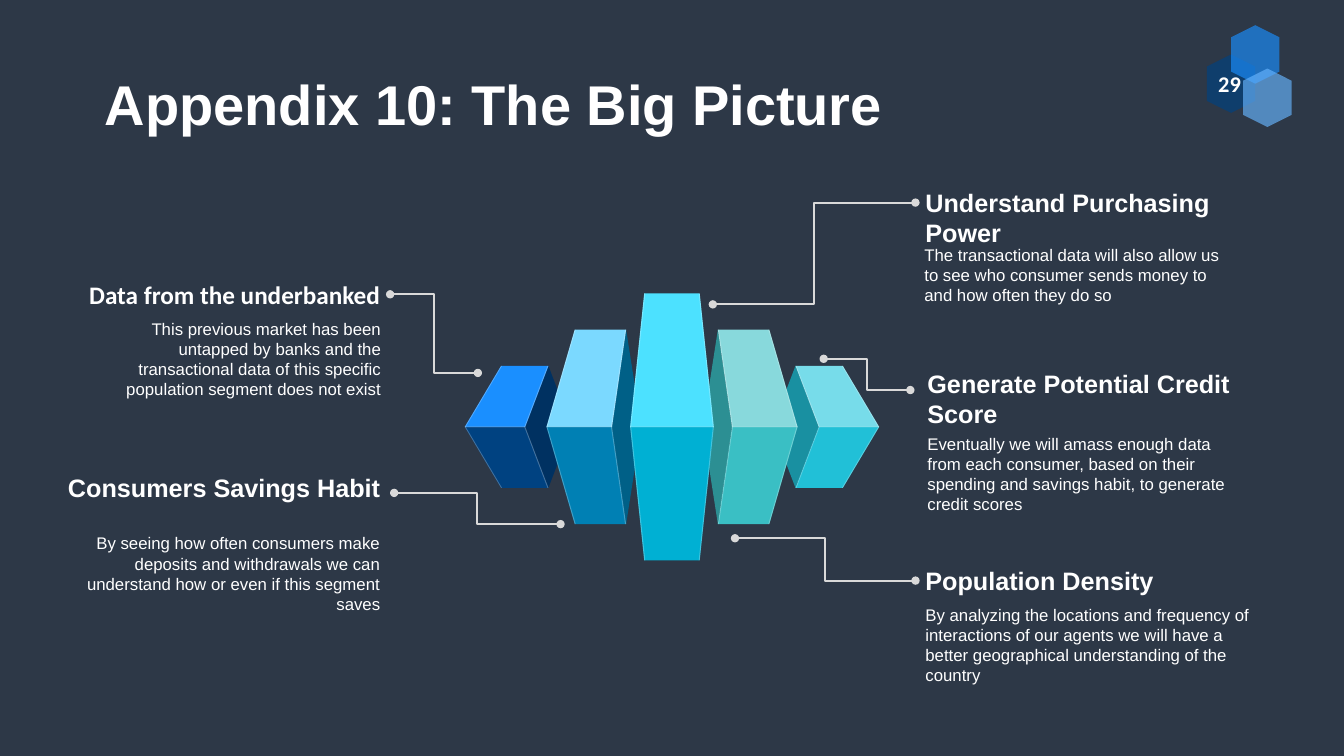
from pptx import Presentation
from pptx import util as u
from pptx.dml.color import RGBColor
from pptx.enum import shapes, text
from pptx.oxml.ns import qn
from lxml import etree

Inches = u.Inches
BACKGROUND = RGBColor(0x2D, 0x38, 0x47)
WHITE = RGBColor(0xFF, 0xFF, 0xFF)
CONNECTOR_GRAY = RGBColor(0xD9, 0xD9, 0xD9)
NAVY = RGBColor(0x00, 0x42, 0x81)
BLUE = RGBColor(0x1A, 0x8F, 0xFF)
PALE_BLUE = RGBColor(0x67, 0xB5, 0xFF)
LEFT_OUTER = (RGBColor(0x00, 0x31, 0x61), BLUE, NAVY)
LEFT_INNER = (RGBColor(0x00, 0x60, 0x87), RGBColor(0x7B, 0xD9, 0xFF), RGBColor(0x00, 0x80, 0xB4))
RIGHT_OUTER = (RGBColor(0x19, 0x90, 0xA1), RGBColor(0x77, 0xDC, 0xEA), RGBColor(0x21, 0xC0, 0xD7))
RIGHT_INNER = (RGBColor(0x2C, 0x8F, 0x93), RGBColor(0x88, 0xD9, 0xDC), RGBColor(0x3A, 0xBF, 0xC4))
CENTER_TOP = RGBColor(0x4C, 0xE1, 0xFF)
CENTER_BOTTOM = RGBColor(0x00, 0xB0, 0xD3)

SLIDE_WIDTH = 13.33
MIDDLE = 4.235
EDGE = 0.01

RIGHT, LEFT = text.PP_ALIGN.RIGHT, text.PP_ALIGN.LEFT
TITLE = {"name": "Arial", "size": u.Pt(40), "bold": True}
NUMBER = {"name": "Calibri", "size": u.Pt(16), "bold": True}
HEADING = {"name": "Arial", "size": u.Pt(18), "bold": True}
CALIBRI_HEADING = {"name": "Calibri", "size": u.Pt(18), "bold": True}
BODY = {"name": "Arial", "size": u.Pt(12), "bold": False}

OUTER_PRISM = {"outer": 4.61, "outer_end": 4.97, "front": 5.21, "front_end": 5.44, "back": 5.67, "half": 0.605}
INNER_PRISM = {"outer": 5.42, "outer_end": 5.7, "front": 6.07, "front_end": 6.21, "back": 6.36, "half": 0.965}
CENTER = {"outer": 6.25, "outer_end": 6.39, "half": 1.325}

CALLOUTS = [
    ("Data from the underbanked", (0, 2.72, 3.87, 0.4), CALIBRI_HEADING,
     "This previous market has been untapped by banks and the transactional data "
     "of this specific population segment does not exist", (0.71, 3.11, 3.17, 1.11),
     RIGHT, (4.74, 3.7, 3.87, 2.92)),
    ("Consumers Savings Habit", (0.55, 4.64, 3.32, 0.71), HEADING,
     "By seeing how often consumers make deposits and withdrawals we can understand "
     "how or even if this segment saves", (0.59, 5.24, 3.28, 0.91),
     RIGHT, (5.56, 5.2, 3.91, 4.89)),
    ("Understand Purchasing Power", (9.08, 1.81, 3.59, 0.71), HEADING,
     "The transactional data will also allow us to see who consumer sends money to "
     "and how often they do so", (9.07, 2.38, 3.17, 0.91),
     LEFT, (9.08, 2.01, 7.07, 3.02)),
    ("Generate Potential Credit Score", (9.1, 3.6, 3.59, 0.71), HEADING,
     "Eventually we will amass enough data from each consumer, based on their spending "
     "and savings habit, to generate credit scores", (9.1, 4.25, 3.17, 1.11),
     LEFT, (9.03, 3.87, 8.17, 3.56)),
    ("Population Density", (9.08, 5.56, 3.32, 0.4), HEADING,
     "By analyzing the locations and frequency of interactions of our agents we will have "
     "a better geographical understanding of the country", (9.08, 5.95, 3.59, 1.11),
     LEFT, (9.08, 5.76, 7.29, 5.34)),
]


def paint(shape, color, opacity=100):
    shape.shadow.inherit = False
    shape.line.fill.background()
    shape.fill.solid()
    shape.fill.fore_color.rgb = color
    if opacity < 100:
        color_element = shape.fill._xPr.find(qn("a:solidFill"))[0]
        etree.SubElement(color_element, qn("a:alpha"), val=str(opacity * 1000))


def write(shape, words, font_format, alignment):
    paragraph = shape.text_frame.paragraphs[0]
    paragraph.alignment = alignment
    run = paragraph.add_run()
    run.text = words
    for name, value in font_format.items():
        setattr(run.font, name, value)
    run.font.color.rgb = WHITE
    return paragraph


def add_text(slide, words, box, font_format, alignment):
    shape = slide.shapes.add_textbox(*map(Inches, box))
    shape.text_frame.word_wrap = True
    shape.text_frame.auto_size = text.MSO_AUTO_SIZE.SHAPE_TO_FIT_TEXT
    write(shape, words, font_format, alignment)
    return shape


def add_title(slide, words):
    title = slide.shapes.title
    placement = {"left": 0.94, "top": 0.7, "width": 10.71, "height": 0.73}
    for name, value in placement.items():
        setattr(title, name, Inches(value))
    title.text_frame.auto_size = text.MSO_AUTO_SIZE.NONE
    title.text_frame.vertical_anchor = text.MSO_ANCHOR.MIDDLE
    write(title, words, TITLE, LEFT).line_spacing = 0.9


def add_page_badge(slide, number):
    group = slide.shapes.add_group_shape()
    for left, top, color in ((11.92, 0.59, NAVY), (12.16, 0.3, BLUE), (12.28, 0.73, PALE_BLUE)):
        box = map(Inches, (left, top, 0.58, 0.48))
        hexagon = group.shapes.add_shape(shapes.MSO_SHAPE.HEXAGON, *box)
        hexagon.rotation = 270
        paint(hexagon, color, 65)
    add_text(slide, number, (11.89, 0.65, 0.61, 0.37), NUMBER, text.PP_ALIGN.CENTER)


def add_polygon(group, points, color, mirrored=False, opacity=100):
    corners = [(Inches(SLIDE_WIDTH - x if mirrored else x), Inches(y)) for x, y in points]
    builder = group.shapes.build_freeform(*corners[0], scale=1.0)
    builder.add_line_segments(corners[1:], close=True)
    paint(builder.convert_to_shape(), color, opacity)


def add_prism(group, prism, colors, mirrored):
    side, upper, lower = colors
    front, front_end = prism["front"], prism["front_end"]
    top, bottom = MIDDLE - prism["half"], MIDDLE + prism["half"]
    diamond = [(front, MIDDLE), (front_end, top), (prism["back"], MIDDLE), (front_end, bottom)]
    add_polygon(group, diamond, side, mirrored)
    for end, color in ((top, upper), (bottom, lower)):
        face = [(front, MIDDLE), (front_end, end), (prism["outer_end"], end), (prism["outer"], MIDDLE)]
        add_polygon(group, face, color, mirrored)


def add_center(group):
    outer, outer_end = CENTER["outer"], CENTER["outer_end"]
    for direction, color in ((-1, CENTER_TOP), (1, CENTER_BOTTOM)):
        end = MIDDLE + direction * CENTER["half"]
        face = [(outer, MIDDLE), (outer_end, end),
                (SLIDE_WIDTH - outer_end, end), (SLIDE_WIDTH - outer, MIDDLE)]
        add_polygon(group, face, color)


def add_seam(group, left, right, mirrored=False):
    top, bottom = MIDDLE - EDGE / 2, MIDDLE + EDGE / 2
    strip = [(left, top), (right, top), (right, bottom), (left, bottom)]
    add_polygon(group, strip, WHITE, mirrored, 25)


def add_edge(group, bend, end, half, width, mirrored):
    top, bottom = MIDDLE - half, MIDDLE + half
    chevron = [(bend, MIDDLE), (end, top), (end + width, top),
               (bend + width, MIDDLE), (end + width, bottom), (end, bottom)]
    add_polygon(group, chevron, WHITE, mirrored, 25)


def add_prism_fan(slide):
    group = slide.shapes.add_group_shape()
    for outer, inner, mirrored in ((LEFT_OUTER, LEFT_INNER, False), (RIGHT_OUTER, RIGHT_INNER, True)):
        add_prism(group, OUTER_PRISM, outer, mirrored)
        add_prism(group, INNER_PRISM, inner, mirrored)
    add_center(group)
    add_seam(group, CENTER["outer"], SLIDE_WIDTH - CENTER["outer"])
    for mirrored in (False, True):
        for prism in (OUTER_PRISM, INNER_PRISM):
            add_seam(group, prism["outer"], prism["front"], mirrored)
            add_edge(group, prism["front"], prism["front_end"], prism["half"], -EDGE, mirrored)
        for prism in (OUTER_PRISM, INNER_PRISM, CENTER):
            add_edge(group, prism["outer"], prism["outer_end"], prism["half"], EDGE, mirrored)


def add_leader(slide, ends):
    connector = slide.shapes.add_connector(shapes.MSO_CONNECTOR.ELBOW, *map(Inches, ends))
    connector.line.color.rgb = CONNECTOR_GRAY
    connector.line.width = u.Pt(1.5)
    line = connector.line._get_or_add_ln()
    for tag in ("a:headEnd", "a:tailEnd"):
        etree.SubElement(line, qn(tag), type="oval")
    etree.SubElement(connector._element.spPr, qn("a:effectLst"))
    return connector


def main():
    presentation = Presentation()
    presentation.slide_width = Inches(SLIDE_WIDTH)
    presentation.slide_height = Inches(7.5)
    slide = presentation.slides.add_slide(presentation.slide_layouts[5])
    slide.background.fill.solid()
    slide.background.fill.fore_color.rgb = BACKGROUND
    add_page_badge(slide, "29")
    add_title(slide, "Appendix 10: The Big Picture")
    add_prism_fan(slide)
    headings, leaders = {}, {}
    for heading, heading_box, heading_format, body, body_box, alignment, ends in CALLOUTS:
        add_text(slide, body, body_box, BODY, alignment)
        headings[heading] = add_text(slide, heading, heading_box, heading_format, alignment)
        leaders[heading] = add_leader(slide, ends)
    leaders["Data from the underbanked"].end_connect(headings["Data from the underbanked"], 3)
    leaders["Population Density"].begin_connect(headings["Population Density"], 1)
    presentation.save("out.pptx")


if __name__ == "__main__":
    main()
